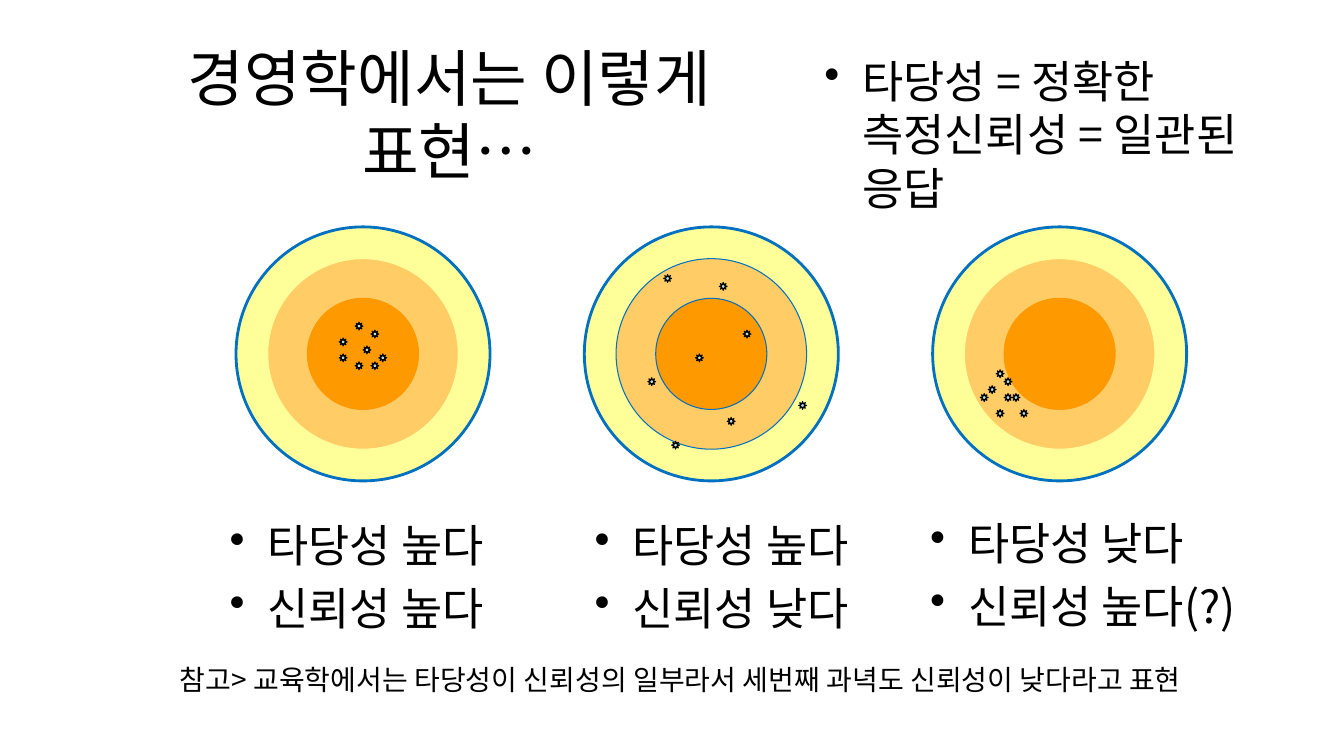
from dataclasses import dataclass

from lxml import etree
from pptx import Presentation
from pptx.dml.color import RGBColor
from pptx.enum import shapes, text
from pptx.oxml import ns
from pptx.util import Pt


@dataclass(frozen=True)
class Theme:
    font: str = "Noto Sans CJK KR"
    ink: str = "000000"
    outer: str = "FFFF99"
    middle: str = "FFCC66"
    bullseye: str = "FF9900"
    rim: str = "0070C0"
    hit: str = "BBE0E3"
    title_size: int = 44
    body_size: int = 32
    note_size: int = 20
    thin: float = 0.75
    thick: float = 2


THEME = Theme()
STEP = 5.67  # grid unit for rings and hits
FIRST_X, CENTRE_Y, TARGET_GAP = 259.3, 252.8, 248.8
RING_STEPS = (32, 24, 14)
RING_FILLS = (THEME.outer, THEME.middle, THEME.bullseye)
SOFT_LINES = (THEME.outer, THEME.outer, THEME.bullseye)

# Ring line colours, and each hit's top left corner in steps from the centre
TARGETS = (
    (SOFT_LINES, ((-3, -2), (-3, 0), (0, -1), (-1, 1),
                  (-1, -4), (2, 0), (1, -3), (1, 1))),
    ((THEME.rim,) * 3, ((-8, 3), (-2, 0), (2, 8), (-6, -10),
                        (-5, 11), (11, 6), (4, -3), (1, -9))),
    (SOFT_LINES, ((-8, 2), (-10, 5), (-5, 7), (-8, 7),
                  (-7, 5), (-7, 3), (-9, 4), (-6, 5))),
)

# Left, top, width, height and lines of each bullet list
BULLET_LISTS = (
    (157, 366.5, 198.7, 96.5, ("타당성 높다", "신뢰성 높다")),
    (417.6, 366.5, 198.7, 96.5, ("타당성 높다", "신뢰성 낮다")),
    (657.4, 365, 247.7, 98, ("타당성 낮다", "신뢰성 높다(?)")),
    (581.8, 34.6, 334.8, 93.6, ("타당성 = 정확한 측정신뢰성 = 일관된 응답",)),
)


def set_font(font, size):
    font.name = THEME.font
    font.size = Pt(size)
    font.color.rgb = RGBColor.from_string(THEME.ink)
    latin = font._element.find(ns.qn("a:latin"))
    east_asian = etree.Element(ns.qn("a:ea"), typeface=THEME.font)
    latin.addnext(east_asian)


def place(shape, left, top, width, height):
    shape.left, shape.top = Pt(left), Pt(top)
    shape.width, shape.height = Pt(width), Pt(height)


def add_title(slide, wording):
    title = slide.shapes.title
    place(title, 65.5, 36, 511.2, 90)
    title.text_frame.text = wording
    title.text_frame.vertical_anchor = text.MSO_ANCHOR.MIDDLE
    paragraph = title.text_frame.paragraphs[0]
    paragraph.alignment = text.PP_ALIGN.CENTER
    set_font(paragraph.font, THEME.title_size)


def add_text_box(slide, left, top, width, height, lines, size):
    box = slide.shapes.add_textbox(Pt(left), Pt(top), Pt(width), Pt(height))
    frame = box.text_frame
    frame.word_wrap = True
    frame.text = "\n".join(lines)
    for paragraph in frame.paragraphs:
        set_font(paragraph.font, size)
    return frame


def add_bullet_list(slide, left, top, width, height, lines):
    frame = add_text_box(slide, left, top, width, height, lines, THEME.body_size)
    for paragraph in frame.paragraphs:
        paragraph.space_before = Pt(0.2 * THEME.body_size)
        properties = paragraph._p.get_or_add_pPr()
        properties.set("marL", str(Pt(27)))
        properties.set("indent", str(Pt(-27)))
        bullet = etree.Element(ns.qn("a:buChar"), char="•")
        properties.find(ns.qn("a:spcBef")).addnext(bullet)


def add_note(slide, wording):
    frame = add_text_box(slide, 77.8, 467.3, 816.5, 35.3, (wording,),
                         THEME.note_size)
    frame.vertical_anchor = text.MSO_ANCHOR.MIDDLE
    frame.paragraphs[0].alignment = text.PP_ALIGN.CENTER


def add_mark(slide, kind, left, top, size, fill, line, weight=THEME.thin):
    """Add a square preset shape; a fill of None leaves it hollow."""
    mark = slide.shapes.add_shape(kind, Pt(left), Pt(top), Pt(size), Pt(size))
    mark.shadow.inherit = False
    if fill is None:
        mark.fill.background()
    else:
        mark.fill.solid()
        mark.fill.fore_color.rgb = RGBColor.from_string(fill)
    mark.line.color.rgb = RGBColor.from_string(line)
    mark.line.width = Pt(weight)


def add_ring(slide, centre_x, steps, fill, line, weight=THEME.thin):
    size = steps * STEP
    add_mark(slide, shapes.MSO_SHAPE.OVAL, centre_x - size / 2,
             CENTRE_Y - size / 2, size, fill, line, weight)


def add_target(slide, centre_x, ring_lines, hits):
    for steps, fill, line in zip(RING_STEPS, RING_FILLS, ring_lines):
        add_ring(slide, centre_x, steps, fill, line)
    for column, row in hits:
        add_mark(slide, shapes.MSO_SHAPE.SUN, centre_x + column * STEP,
                 CENTRE_Y + row * STEP, STEP, THEME.hit, THEME.ink)
    add_ring(slide, centre_x, RING_STEPS[0], None, THEME.rim, THEME.thick)


def main():
    presentation = Presentation()
    presentation.slide_width, presentation.slide_height = Pt(960), Pt(540)
    title_only = presentation.slide_layouts.get_by_name("Title Only")
    slide = presentation.slides.add_slide(title_only)
    add_title(slide, "경영학에서는 이렇게 표현…")
    for index, (ring_lines, hits) in enumerate(TARGETS):
        add_target(slide, FIRST_X + index * TARGET_GAP, ring_lines, hits)
    for bullet_list in BULLET_LISTS:
        add_bullet_list(slide, *bullet_list)
    add_note(slide, "참고> 교육학에서는 타당성이 신뢰성의 일부라서 "
                    "세번째 과녁도 신뢰성이 낮다라고 표현")
    presentation.save("out.pptx")


if __name__ == "__main__":
    main()
